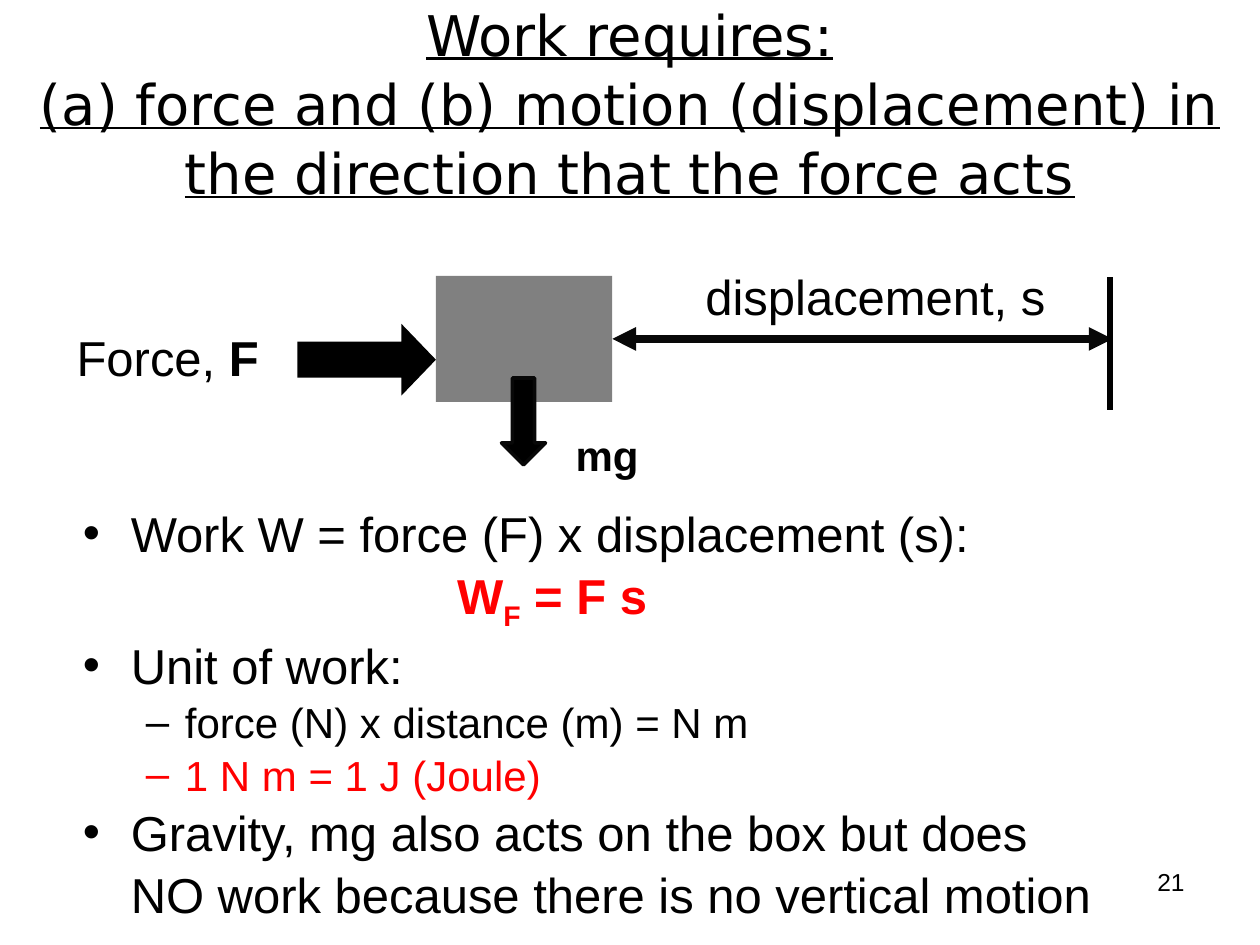
from lxml import etree
from pptx import Presentation
from pptx.dml.color import RGBColor
from pptx.enum.shapes import MSO_CONNECTOR, MSO_SHAPE
from pptx.enum.text import MSO_ANCHOR, PP_ALIGN
from pptx.oxml.ns import qn
from pptx.util import Inches, Pt

BLACK = RGBColor(0x00, 0x00, 0x00)
INK = RGBColor(0x08, 0x08, 0x08)
GRAY = RGBColor(0x80, 0x80, 0x80)
RED = RGBColor(0xFF, 0x00, 0x00)
LEFT, CENTER, RIGHT = PP_ALIGN.LEFT, PP_ALIGN.CENTER, PP_ALIGN.RIGHT
TOP, MIDDLE = MSO_ANCHOR.TOP, MSO_ANCHOR.MIDDLE
STRAIGHT = MSO_CONNECTOR.STRAIGHT
RECTANGLE = MSO_SHAPE.RECTANGLE
RIGHT_ARROW, DOWN_ARROW = MSO_SHAPE.RIGHT_ARROW, MSO_SHAPE.DOWN_ARROW
RIGHT_SIDE = 3


class Page:
    def __init__(self, slide, font="Arial"):
        self.shapes = slide.shapes
        self.font = font

    def text_frame(self, left, top, width, height, wrap=True, anchor=TOP):
        box = self.shapes.add_textbox(Inches(left), Inches(top), Inches(width), Inches(height))
        frame = box.text_frame
        frame.word_wrap = wrap
        frame.vertical_anchor = anchor
        return frame

    def span(self, para, text, size, color=BLACK, bold=False, font=None):
        run = para.add_run()
        run.text = text
        run.font.name = font or self.font
        run.font.size = Pt(size)
        run.font.bold = bold
        run.font.color.rgb = color
        return run

    def label(self, left, top, width, height, spans, size, align=LEFT, wrap=False):
        """Write one line; spans are (text, bold) pairs."""
        para = self.text_frame(left, top, width, height, wrap).paragraphs[0]
        para.alignment = align
        for text, bold in spans:
            self.span(para, text, size, bold=bold)

    def indent(self, para, margin, hanging=0, bullet=None):
        props = para._p.get_or_add_pPr()
        props.set("marL", str(Inches(margin)))
        props.set("indent", str(-Inches(hanging)))
        if bullet:
            etree.SubElement(props, qn("a:buFont"), typeface=self.font)
            etree.SubElement(props, qn("a:buChar"), char=bullet)
        else:
            etree.SubElement(props, qn("a:buNone"))

    def shape(self, kind, left, top, width, height, fill, line=None, line_width=0):
        shape = self.shapes.add_shape(
            kind, Inches(left), Inches(top), Inches(width), Inches(height))
        shape.shadow.inherit = False
        shape.fill.solid()
        shape.fill.fore_color.rgb = fill
        if line is None:
            shape.line.fill.background()
        else:
            shape.line.color.rgb = line
            shape.line.width = Pt(line_width)
        return shape

    def line(self, x1, y1, x2, y2, color, width, arrows=False):
        line = self.shapes.add_connector(
            STRAIGHT, Inches(x1), Inches(y1), Inches(x2), Inches(y2))
        line.line.color.rgb = color
        line.line.width = Pt(width)
        if arrows:
            stroke = line.line._get_or_add_ln()
            for end in ("a:headEnd", "a:tailEnd"):
                etree.SubElement(stroke, qn(end), type="triangle")
        etree.SubElement(line._element.spPr, qn("a:effectLst"))
        return line


def add_title(page):
    para = page.text_frame(0, 0.07, 10, 1.48, anchor=MIDDLE).paragraphs[0]
    para.alignment = CENTER
    para.line_spacing = 1.03
    lines = ("Work requires:",
             "(a) force and (b) motion (displacement) in the direction that the force acts")
    for number, text in enumerate(lines):
        if number:
            para.add_line_break()
        page.span(para, text, 32, font="DejaVu Sans").font.underline = True


def add_diagram(page):
    block = page.shape(RECTANGLE, 3.46, 2.19, 1.4, 1, GRAY)
    force = page.shape(RIGHT_ARROW, 2.36, 2.57, 1.1, 0.57, BLACK)
    force.adjustments[1] = 0.48
    page.label(0.51, 2.55, 1.65, 0.57, [("Force, ", False), ("F", True)], 28)
    displacement = page.line(4.86, 2.69, 8.83, 2.69, INK, 4.5, arrows=True)
    displacement.begin_connect(block, RIGHT_SIDE)
    page.line(8.81, 2.2, 8.81, 3.25, BLACK, 3)
    page.label(5.5, 2.07, 2.93, 0.57, [("displacement, s", False)], 28)
    page.shape(DOWN_ARROW, 3.98, 3, 0.35, 0.69, BLACK, INK, 2)
    page.label(4.47, 3.36, 0.71, 0.5, [("mg", True)], 24)


def add_body(page):
    main = (0.38, 0.38, "•")
    sub = (0.81, 0.31, "–")
    formula = (2.97,)
    rows = [
        (main, 28, BLACK, "Work W = force (F) x displacement (s):"),
        (formula, 28, RED, None),
        (main, 28, BLACK, "Unit of work:"),
        (sub, 24, BLACK, "force (N) x distance (m) = N m"),
        (sub, 24, RED, "1 N m = 1 J (Joule)"),
        (main, 28, BLACK, "Gravity, mg also acts on the box but does NO work "
                          "because there is no vertical motion"),
    ]
    frame = page.text_frame(0.56, 3.92, 8.33, 3.46)
    for number, (layout, size, color, text) in enumerate(rows):
        para = frame.add_paragraph() if number else frame.paragraphs[0]
        para.line_spacing = 1.05
        para.level = int(layout is sub)
        page.indent(para, *layout)
        if text:
            page.span(para, text, size, color)
        else:
            page.span(para, "W", size, color, bold=True)
            subscript = page.span(para, "F", size, color, bold=True)
            subscript.font._element.set("baseline", "-25000")
            page.span(para, " = F s", size, color, bold=True)


def main():
    deck = Presentation()
    deck.slide_width, deck.slide_height = Inches(10), Inches(7.5)
    page = Page(deck.slides.add_slide(deck.slide_layouts[6]))
    add_title(page)
    add_body(page)
    page.label(7.17, 6.83, 2.33, 0.52, [("21", False)], 14, RIGHT, wrap=True)
    add_diagram(page)
    deck.save("out.pptx")


if __name__ == "__main__":
    main()
